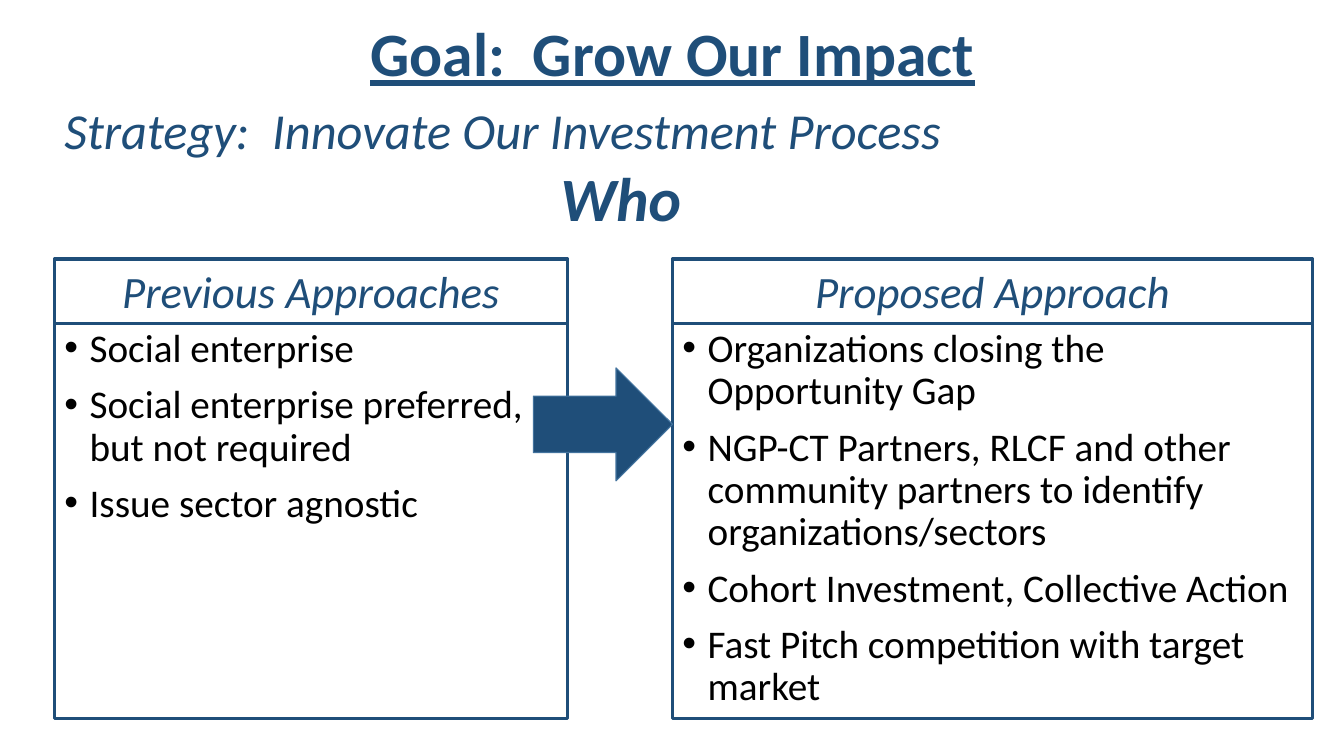
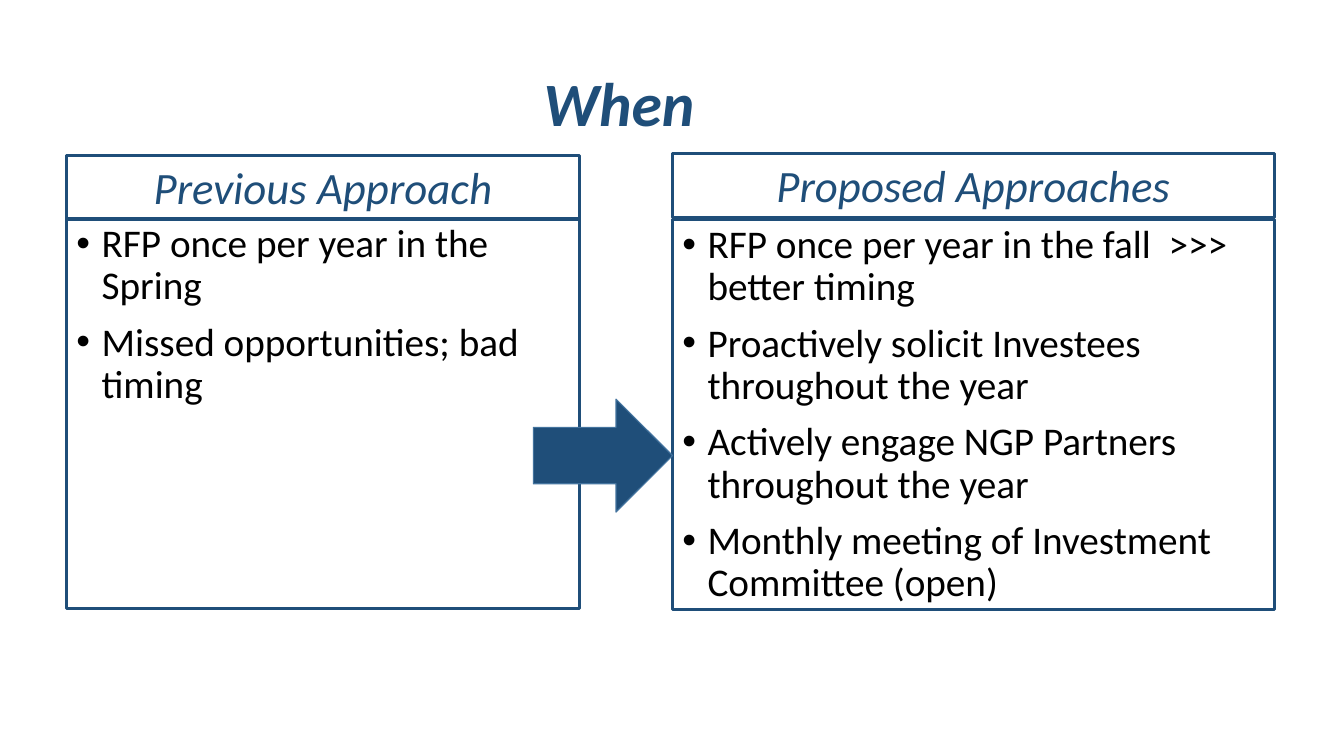
from dataclasses import dataclass

from lxml.etree import SubElement
from pptx import Presentation
from pptx.dml.color import RGBColor
from pptx.enum.shapes import MSO_SHAPE
from pptx.enum.text import MSO_ANCHOR, PP_ALIGN
from pptx.oxml.ns import qn
from pptx.shapes.autoshape import Shape
from pptx.slide import Slide
from pptx.text.text import _Paragraph as Paragraph
from pptx.util import Pt

PX = 9144  # EMU per px, 100 px to the inch
PAGE_WIDTH, PAGE_HEIGHT = 1333, 750

NAVY = RGBColor(0x1F, 0x4E, 0x79)
ARROW_EDGE = RGBColor(0x43, 0x73, 0x9E)
BLACK = RGBColor(0, 0, 0)
FONT = "Calibri"
TIGHT = 0.9

HEADER_HEIGHT = 64
BULLET_INDENT = 25
ARROW_LEFT, ARROW_WIDTH, ARROW_HEIGHT = 529, 138, 112


@dataclass(frozen=True)
class Box:
    left: int
    top: int
    width: int
    height: int

    def emu(self) -> tuple[int, int, int, int]:
        return self.left * PX, self.top * PX, self.width * PX, self.height * PX


@dataclass(frozen=True)
class TextStyle:
    size: int
    color: RGBColor = NAVY
    bold: bool = False
    italic: bool = False
    underline: bool = False
    align: PP_ALIGN = PP_ALIGN.LEFT
    line_spacing: float = 1.0


GOAL = TextStyle(44, bold=True, underline=True, align=PP_ALIGN.CENTER, line_spacing=TIGHT)
STRATEGY = TextStyle(36, italic=True)
QUESTION = TextStyle(44, bold=True, italic=True, line_spacing=TIGHT)
HEADER = TextStyle(32, italic=True, align=PP_ALIGN.CENTER)
BULLET = TextStyle(28, color=BLACK, line_spacing=TIGHT)


@dataclass(frozen=True)
class Panel:
    """A bulleted box with a header box above it."""
    header: str
    header_top: int
    body: Box
    bullets: tuple[str, ...]


@dataclass(frozen=True)
class Comparison:
    question: str
    question_box: Box
    arrow_top: int
    panels: tuple[Panel, Panel]


WHO = Comparison("Who", Box(546, 167, 157, 65), 365, (
    Panel("Previous Approaches", 257, Box(54, 321, 509, 392), (
        "Social enterprise",
        "Social enterprise preferred, but not required",
        "Issue sector agnostic",
    )),
    Panel("Proposed Approach", 257, Box(667, 321, 635, 392), (
        "Organizations closing the Opportunity Gap",
        "NGP-CT Partners, RLCF and other community partners to identify "
        "organizations/sectors",
        "Cohort Investment, Collective Action",
        "Fast Pitch competition with target market",
    )),
))
WHEN = Comparison("When", Box(529, 73, 185, 65), 396, (
    Panel("Previous Approach", 154, Box(66, 217, 509, 387), (
        "RFP once per year in the Spring",
        "Missed opportunities; bad timing",
    )),
    Panel("Proposed Approaches", 152, Box(667, 218, 597, 387), (
        "RFP once per year in the fall  >>>  better timing",
        "Proactively solicit Investees throughout the year",
        "Actively engage NGP Partners throughout the year",
        "Monthly meeting of Investment Committee (open)",
    )),
))


def write(shape: Shape, lines: tuple[str, ...], style: TextStyle,
          anchor: MSO_ANCHOR = MSO_ANCHOR.TOP) -> None:
    frame = shape.text_frame
    frame.word_wrap = True
    frame.vertical_anchor = anchor
    frame.text = "\n".join(lines)
    for para in frame.paragraphs:
        para.alignment = style.align
        para.line_spacing = style.line_spacing
        font = para.font
        font.name = FONT
        font.size = Pt(style.size)
        font.bold = style.bold
        font.italic = style.italic
        font.underline = style.underline
        font.color.rgb = style.color


def add_bullet(para: Paragraph) -> None:
    para.space_before = Pt(10)
    properties = para._p.get_or_add_pPr()
    properties.set("marL", str(BULLET_INDENT * PX))
    properties.set("indent", str(-BULLET_INDENT * PX))
    bullet_font = SubElement(properties, qn("a:buFont"))
    bullet_font.set("typeface", "Arial")
    bullet = SubElement(properties, qn("a:buChar"))
    bullet.set("char", "•")
    # The schema wants the default run properties after the bullet.
    properties.append(properties.find(qn("a:defRPr")))


def add_label(page: Slide, box: Box, text: str, style: TextStyle,
              anchor: MSO_ANCHOR = MSO_ANCHOR.MIDDLE) -> None:
    write(page.shapes.add_textbox(*box.emu()), (text,), style, anchor)


def add_frame(page: Slide, box: Box) -> Shape:
    """Add an unfilled rectangle with a navy outline."""
    frame = page.shapes.add_shape(MSO_SHAPE.RECTANGLE, *box.emu())
    frame.shadow.inherit = False
    frame.fill.background()
    frame.line.color.rgb = NAVY
    frame.line.width = Pt(2.25)
    return frame


def add_panel(page: Slide, panel: Panel) -> None:
    body = add_frame(page, panel.body)
    write(body, panel.bullets, BULLET)
    for para in body.text_frame.paragraphs:
        add_bullet(para)
    header_box = Box(panel.body.left, panel.header_top, panel.body.width, HEADER_HEIGHT)
    write(add_frame(page, header_box), (panel.header,), HEADER)


def add_arrow(page: Slide, top: int) -> None:
    box = Box(ARROW_LEFT, top, ARROW_WIDTH, ARROW_HEIGHT)
    arrow = page.shapes.add_shape(MSO_SHAPE.RIGHT_ARROW, *box.emu())
    arrow.shadow.inherit = False
    arrow.fill.solid()
    arrow.fill.fore_color.rgb = NAVY
    arrow.line.color.rgb = ARROW_EDGE
    arrow.line.width = Pt(0.85)


def add_comparison(page: Slide, comparison: Comparison) -> None:
    add_label(page, comparison.question_box, comparison.question, QUESTION)
    for panel in comparison.panels:
        add_panel(page, panel)
    add_arrow(page, comparison.arrow_top)


def main() -> None:
    deck = Presentation()
    deck.slide_width = PAGE_WIDTH * PX
    deck.slide_height = PAGE_HEIGHT * PX
    blank = deck.slide_layouts[6]

    who_page = deck.slides.add_slide(blank)
    add_label(who_page, Box(92, 28, 1150, 57), "Goal:  Grow Our Impact", GOAL)
    add_label(who_page, Box(54, 93, 1176, 71),
              "Strategy:  Innovate Our Investment Process", STRATEGY, MSO_ANCHOR.TOP)
    add_comparison(who_page, WHO)

    when_page = deck.slides.add_slide(blank)
    add_comparison(when_page, WHEN)

    deck.save("out.pptx")


if __name__ == "__main__":
    main()
